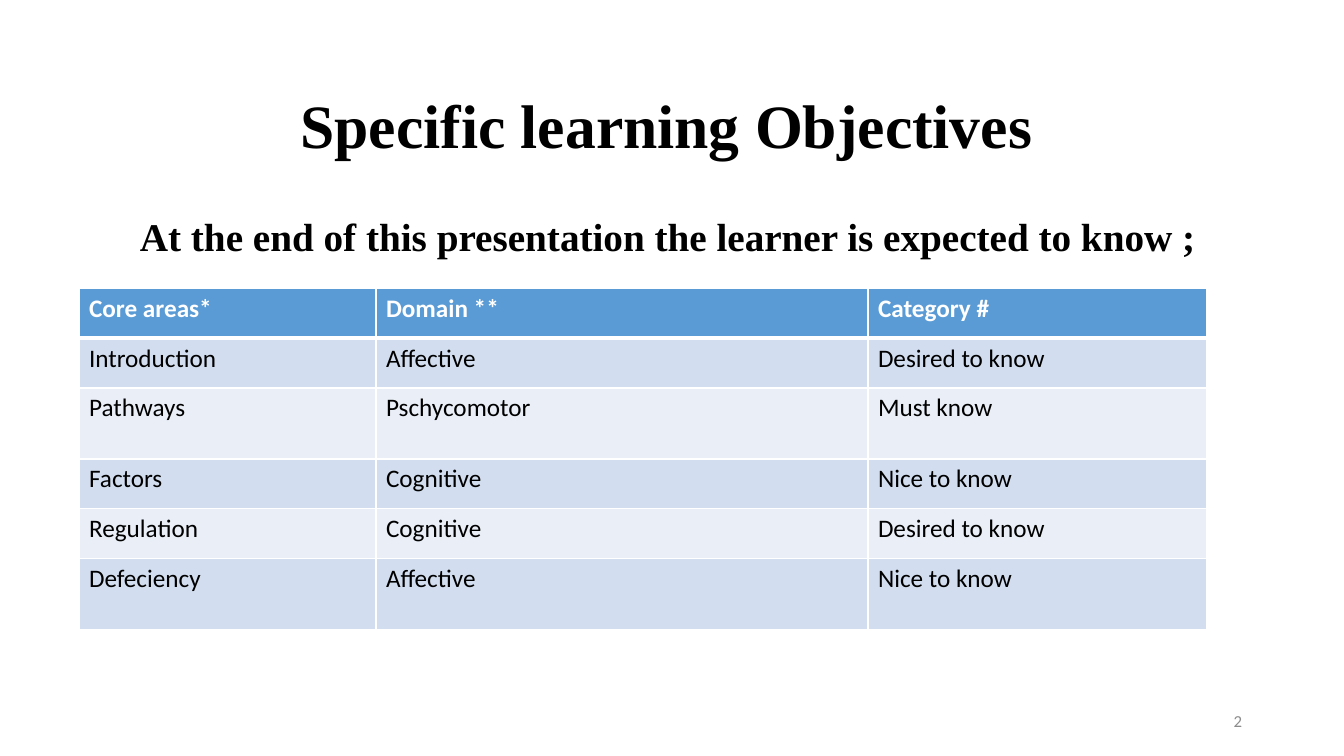
import pptx
import pptx.dml.color
import pptx.enum.text
import pptx.oxml
import pptx.oxml.ns
import pptx.util

RGBColor = pptx.dml.color.RGBColor
BLACK = RGBColor(0x00, 0x00, 0x00)
WHITE = RGBColor(0xFF, 0xFF, 0xFF)
GREY = RGBColor(0x8C, 0x8C, 0x8C)
HEADER_BLUE = RGBColor(0x5B, 0x9B, 0xD5)
BAND_DARK = RGBColor(0xD2, 0xDE, 0xEF)
BAND_LIGHT = RGBColor(0xEA, 0xEF, 0xF7)

ALIGN = pptx.enum.text.PP_ALIGN
ANCHOR = pptx.enum.text.MSO_ANCHOR
PX = 914400 / 100.8


def px(length):
    return pptx.util.Emu(round(length * PX))


def write(text_frame, text, font_name, size, color, bold=False):
    paragraph = text_frame.paragraphs[0]
    paragraph.text = text
    font = paragraph.runs[0].font
    font.name = font_name
    font.size = pptx.util.Pt(size)
    font.bold = bold
    font.color.rgb = color
    return paragraph


presentation = pptx.Presentation()
presentation.slide_width = px(1344)
presentation.slide_height = px(756)
slide = presentation.slides.add_slide(presentation.slide_layouts[6])

# Title, subtitle and slide number
texts = [
    ((164, 68, 1021, 122), "Specific learning Objectives ", "Times New Roman", 44,
     BLACK, True, ALIGN.CENTER, ANCHOR.MIDDLE, 0.9),
    ((130, 207, 1080, 57), "At the end of this presentation the learner is expected to know ;",
     "Times New Roman", 28, BLACK, True, ALIGN.LEFT, ANCHOR.TOP, 1.0),
    ((950, 701, 302, 40), "2", "Calibri", 12, GREY, False, ALIGN.RIGHT, ANCHOR.MIDDLE, 1.0),
]
for box, text, font_name, size, color, bold, alignment, anchor, spacing in texts:
    text_frame = slide.shapes.add_textbox(*map(px, box)).text_frame
    text_frame.word_wrap = True
    text_frame.vertical_anchor = anchor
    paragraph = write(text_frame, text, font_name, size, color, bold)
    paragraph.alignment = alignment
    paragraph.line_spacing = spacing

# Objectives table
objectives = [
    ("Core areas*", "Domain **", "Category #"),
    ("Introduction", "Affective", "Desired to know"),
    ("Pathways", "Pschycomotor", "Must know"),
    ("Factors", "Cognitive", "Nice to know"),
    ("Regulation", "Cognitive", "Desired to know"),
    ("Defeciency", "Affective", "Nice to know"),
]
column_widths = [297, 492, 339]
row_heights = [50, 50, 71, 50, 50, 71]
table = slide.shapes.add_table(
    len(objectives), len(column_widths),
    px(79), px(288), px(sum(column_widths)), px(sum(row_heights))).table
for column, width in zip(table.columns, column_widths):
    column.width = px(width)

for row_index, values in enumerate(objectives):
    table.rows[row_index].height = px(row_heights[row_index])
    is_header = row_index == 0
    band = BAND_DARK if row_index % 2 else BAND_LIGHT
    for column_index, value in enumerate(values):
        cell = table.cell(row_index, column_index)
        write(cell.text_frame, value, "Calibri", 18, WHITE if is_header else BLACK, is_header)

        # White borders, thicker between header and body
        properties = cell._tc.get_or_add_tcPr()
        for side in "LRTB":
            thick = (row_index, side) in [(0, "B"), (1, "T")]
            width = pptx.util.Pt(3 if thick else 1)
            properties.append(pptx.oxml.parse_xml(
                f'<a:ln{side} {pptx.oxml.ns.nsdecls("a")} w="{width}"><a:solidFill>'
                f'<a:srgbClr val="{WHITE}"/></a:solidFill></a:ln{side}>'))
        cell.fill.solid()
        cell.fill.fore_color.rgb = HEADER_BLUE if is_header else band

presentation.save("out.pptx")
